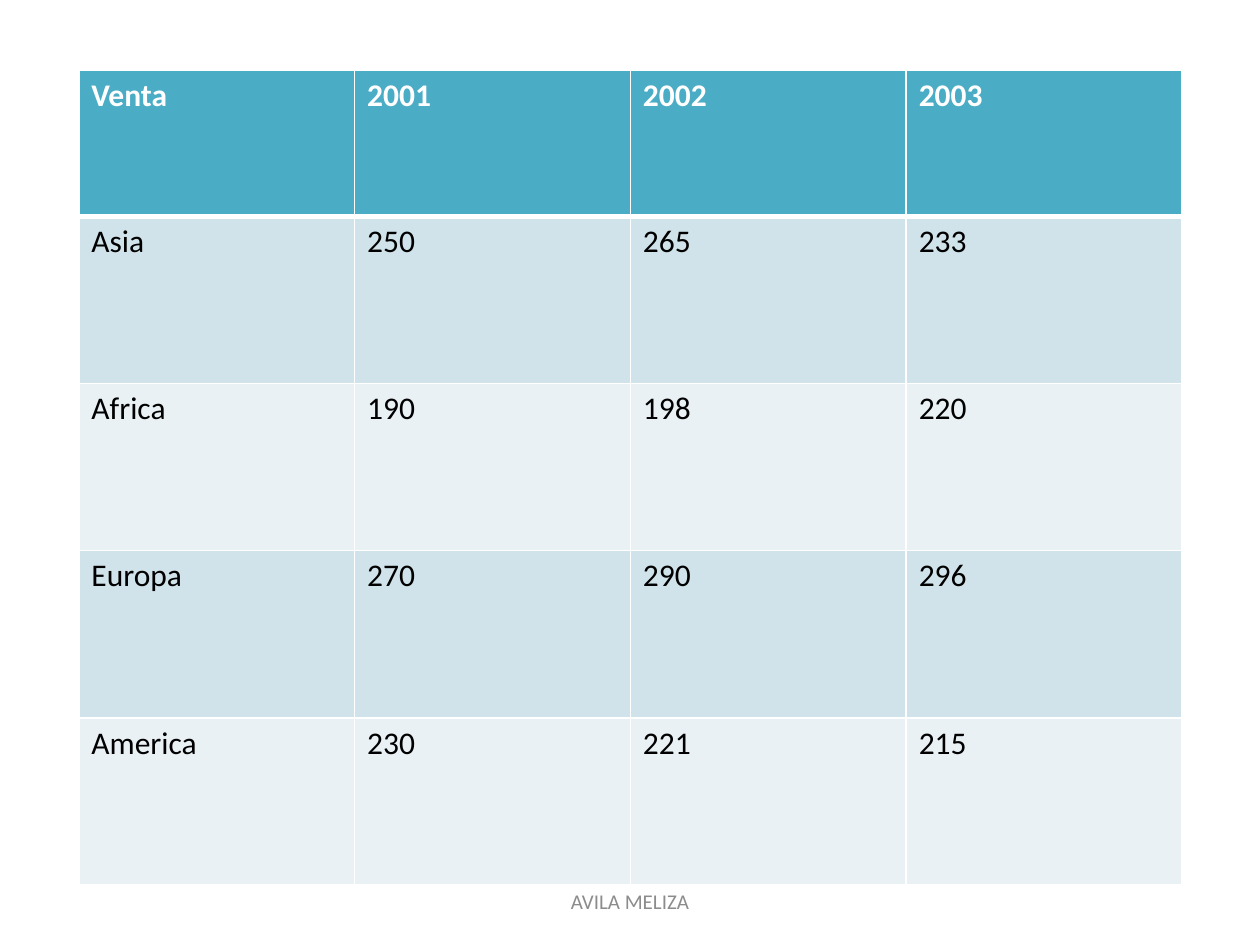
from dataclasses import dataclass

from lxml.etree import SubElement
from pptx import Presentation
from pptx.dml.color import RGBColor as RGB
from pptx.enum.text import MSO_ANCHOR as Anchor, PP_ALIGN as Align
from pptx.oxml.ns import qn
from pptx.util import Cm, Pt


@dataclass(frozen=True)
class Theme:
    """Colours, font and type sizes of the slide."""
    font: str = "Calibri"
    header: str = "4BACC6"
    bands: tuple = ("D0E3EA", "E9F1F5")
    light: str = "FFFFFF"
    dark: str = "000000"
    muted: str = "8C8C8C"
    table_size: int = 18
    footer_size: int = 12
    rule: int = 1
    header_rule: int = 3


class SlideBuilder:
    """Adds styled elements to the current slide."""

    def __init__(self, s, theme):
        """Keep the slide and its theme."""
        self.s, self.theme = s, theme

    def set_text(self, tf, text, size, color, bold=False):
        """Set the text and format its run."""
        tf.text = text
        font = tf.paragraphs[0].runs[0].font
        font.name, font.size, font.bold = self.theme.font, Pt(size), bold
        font.color.rgb = RGB.from_string(color)

    def border(self, cell, side, width):
        """Draw one side of a cell."""
        ln = SubElement(cell._tc.get_or_add_tcPr(), qn(f"a:ln{side}"), w=str(Pt(width)))
        fill = SubElement(ln, qn("a:solidFill"))
        SubElement(fill, qn("a:srgbClr"), val=self.theme.light)

    def cell(self, cell, text, row):
        """Style one cell according to its row."""
        t = self.theme
        is_header = row == 0
        thick = {0: "B", 1: "T"}.get(row)
        for side in "LRTB":
            self.border(cell, side, t.header_rule if side == thick else t.rule)
        cell.fill.solid()
        cell.fill.fore_color.rgb = RGB.from_string(
            t.header if is_header else t.bands[(row - 1) % 2])
        self.set_text(cell.text_frame, text, t.table_size,
                      t.light if is_header else t.dark, is_header)

    def table(self, data, left, top, col_width, header_height, row_height):
        """Add a banded table with a header row."""
        rows, cols = len(data), len(data[0])
        height = header_height + row_height * (rows - 1)
        table = self.s.shapes.add_table(
            rows, cols, left, top, col_width * cols, height).table
        for col in table.columns:
            col.width = col_width
        for i, values in enumerate(data):
            table.rows[i].height = row_height if i else header_height
            for j, value in enumerate(values):
                self.cell(table.cell(i, j), str(value), i)

    def footer(self, text, left, top, width, height):
        """Add centred footer text."""
        tf = self.s.shapes.add_textbox(left, top, width, height).text_frame
        tf.word_wrap, tf.vertical_anchor = True, Anchor.MIDDLE
        self.set_text(tf, text, self.theme.footer_size, self.theme.muted)
        tf.paragraphs[0].alignment = Align.CENTER


SALES = [
    ("Venta", 2001, 2002, 2003),
    ("Asia", 250, 265, 233),
    ("Africa", 190, 198, 220),
    ("Europa", 270, 290, 296),
    ("America", 230, 221, 215),
]


def main():
    """Build and save the sales slide."""
    prs = Presentation()
    prs.slide_width, prs.slide_height = Cm(25.4), Cm(19.05)
    s = prs.slides.add_slide(prs.slide_layouts[6])
    builder = SlideBuilder(s, Theme())
    builder.table(SALES, Cm(1.59), Cm(1.41), Cm(5.56), Cm(2.95), Cm(3.37))
    builder.footer("AVILA MELIZA", Cm(8.68), Cm(17.66), Cm(8.04), Cm(1.01))
    prs.save("out.pptx")


if __name__ == "__main__":
    main()
